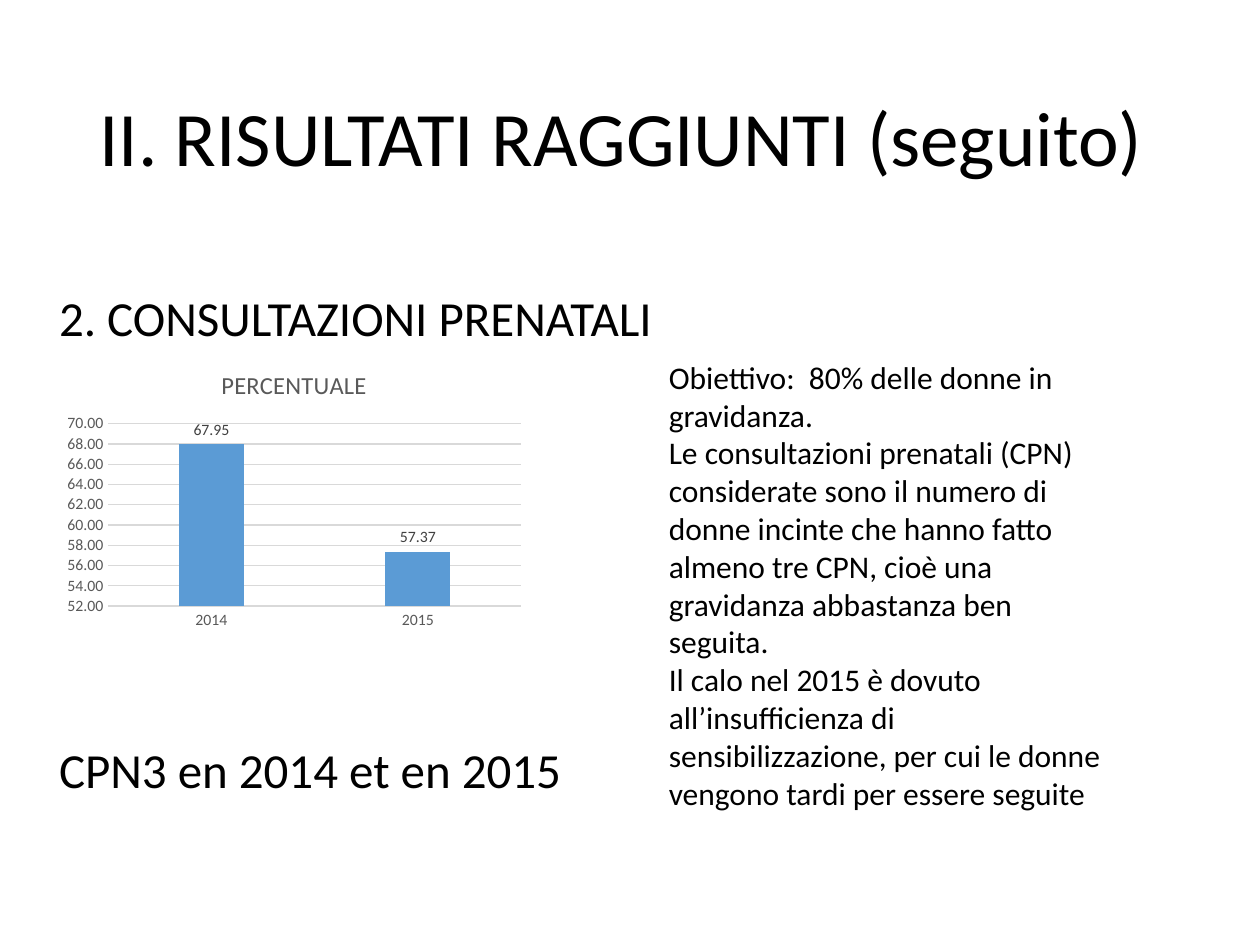
from dataclasses import dataclass

from pptx import Presentation
from pptx.chart.data import CategoryChartData
from pptx.dml.color import RGBColor
from pptx.enum.chart import XL_CHART_TYPE, XL_LABEL_POSITION, XL_TICK_MARK
from pptx.enum.text import MSO_ANCHOR
from pptx.util import Inches, Pt

COLUMN_CLUSTERED = XL_CHART_TYPE.COLUMN_CLUSTERED
OUTSIDE_END = XL_LABEL_POSITION.OUTSIDE_END
NO_TICK = XL_TICK_MARK.NONE
TOP, MIDDLE = MSO_ANCHOR.TOP, MSO_ANCHOR.MIDDLE


@dataclass(frozen=True)
class Theme:
    font: str = "Calibri"
    text: RGBColor = RGBColor(0x00, 0x00, 0x00)
    axis_text: RGBColor = RGBColor(0x59, 0x59, 0x59)
    label_text: RGBColor = RGBColor(0x40, 0x40, 0x40)
    grid: RGBColor = RGBColor(0xD9, 0xD9, 0xD9)
    bar: RGBColor = RGBColor(0x5B, 0x9B, 0xD5)
    title_size: float = 44
    heading_size: float = 28
    body_size: float = 18
    chart_title_size: float = 14
    chart_size: float = 9
    line_width: float = 0.75


@dataclass(frozen=True)
class TextBlock:
    left: float
    top: float
    width: float
    height: float
    paragraphs: tuple[str, ...]
    size: float
    line_spacing: float = 1.0
    space_before: float = 0
    anchor: MSO_ANCHOR = TOP


THEME = Theme()


def heading(top: float, text: str) -> TextBlock:
    return TextBlock(0.37, top, 9.02, 0.6, (text,), THEME.heading_size, 0.8, 10)


TEXT_BLOCKS = (
    TextBlock(0.69, 0.4, 8.62, 1.45, ("II. RISULTATI RAGGIUNTI (seguito)",),
              THEME.title_size, 0.9, anchor=MIDDLE),
    heading(2.32, "2. CONSULTAZIONI PRENATALI"),
    heading(5.91, "CPN3 en 2014 et en 2015"),
    TextBlock(5.21, 2.79, 3.74, 3.74, (
        "Obiettivo:  80% delle donne in gravidanza.",
        "Le consultazioni prenatali (CPN) considerate sono il numero di donne "
        "incinte che hanno fatto almeno tre CPN, cioè una gravidanza abbastanza "
        "ben  seguita.",
        "Il calo nel 2015 è dovuto all’insufficienza di sensibilizzazione, "
        "per cui le donne vengono tardi per essere seguite",
    ), THEME.body_size),
)


def style_font(font, size: float, color: RGBColor) -> None:
    font.name = THEME.font
    font.size = Pt(size)
    font.bold = False
    font.color.rgb = color


def add_text(slide, block: TextBlock) -> None:
    shape = slide.shapes.add_textbox(Inches(block.left), Inches(block.top),
                                     Inches(block.width), Inches(block.height))
    text_frame = shape.text_frame
    text_frame.word_wrap = True
    text_frame.vertical_anchor = block.anchor
    text_frame.text = "\n".join(block.paragraphs)
    for paragraph in text_frame.paragraphs:
        paragraph.line_spacing = block.line_spacing
        paragraph.space_before = Pt(block.space_before)
        for run in paragraph.runs:
            style_font(run.font, block.size, THEME.text)


def style_line(line) -> None:
    line.color.rgb = THEME.grid
    line.width = Pt(THEME.line_width)


def add_percentage_chart(slide) -> None:
    data = CategoryChartData(number_format="#,##0.00")
    data.categories = ("2014", "2015")
    data.add_series("PERCENTUALE", (67.95, 57.37))
    chart = slide.shapes.add_chart(COLUMN_CLUSTERED, Inches(0.46), Inches(2.79),
                                   Inches(3.75), Inches(2.25), data).chart
    style_font(chart.font, THEME.chart_size, THEME.axis_text)
    chart.has_legend = False

    # Chart title
    chart.has_title = True
    title_frame = chart.chart_title.text_frame
    title_frame.text = "PERCENTUALE"
    style_font(title_frame.paragraphs[0].runs[0].font,
               THEME.chart_title_size, THEME.axis_text)
    chart.chart_title.include_in_layout = False

    # Axes
    for axis in (chart.category_axis, chart.value_axis):
        axis.major_tick_mark = NO_TICK
        axis.minor_tick_mark = NO_TICK
        style_font(axis.tick_labels.font, THEME.chart_size, THEME.axis_text)
    style_line(chart.category_axis.format.line)
    value_axis = chart.value_axis
    value_axis.minimum_scale, value_axis.maximum_scale = 52, 70
    value_axis.major_unit = 2
    value_axis.format.line.fill.background()
    value_axis.tick_labels.number_format = "#,##0.00"
    value_axis.tick_labels.number_format_is_linked = False
    style_line(value_axis.major_gridlines.format.line)

    # Columns and their labels
    plot = chart.plots[0]
    plot.gap_width = 219
    plot.overlap = -27
    plot.vary_by_categories = False
    series = plot.series[0]
    series.format.fill.solid()
    series.format.fill.fore_color.rgb = THEME.bar
    labels = series.data_labels
    labels.show_value = True
    labels.position = OUTSIDE_END
    labels.number_format = "#,##0.00"
    labels.number_format_is_linked = False
    style_font(labels.font, THEME.chart_size, THEME.label_text)


def main() -> None:
    presentation = Presentation()
    presentation.slide_width = Inches(10)
    presentation.slide_height = Inches(7.5)
    slide = presentation.slides.add_slide(presentation.slide_layouts[6])
    for block in TEXT_BLOCKS:
        add_text(slide, block)
    add_percentage_chart(slide)
    presentation.save("out.pptx")


if __name__ == "__main__":
    main()
